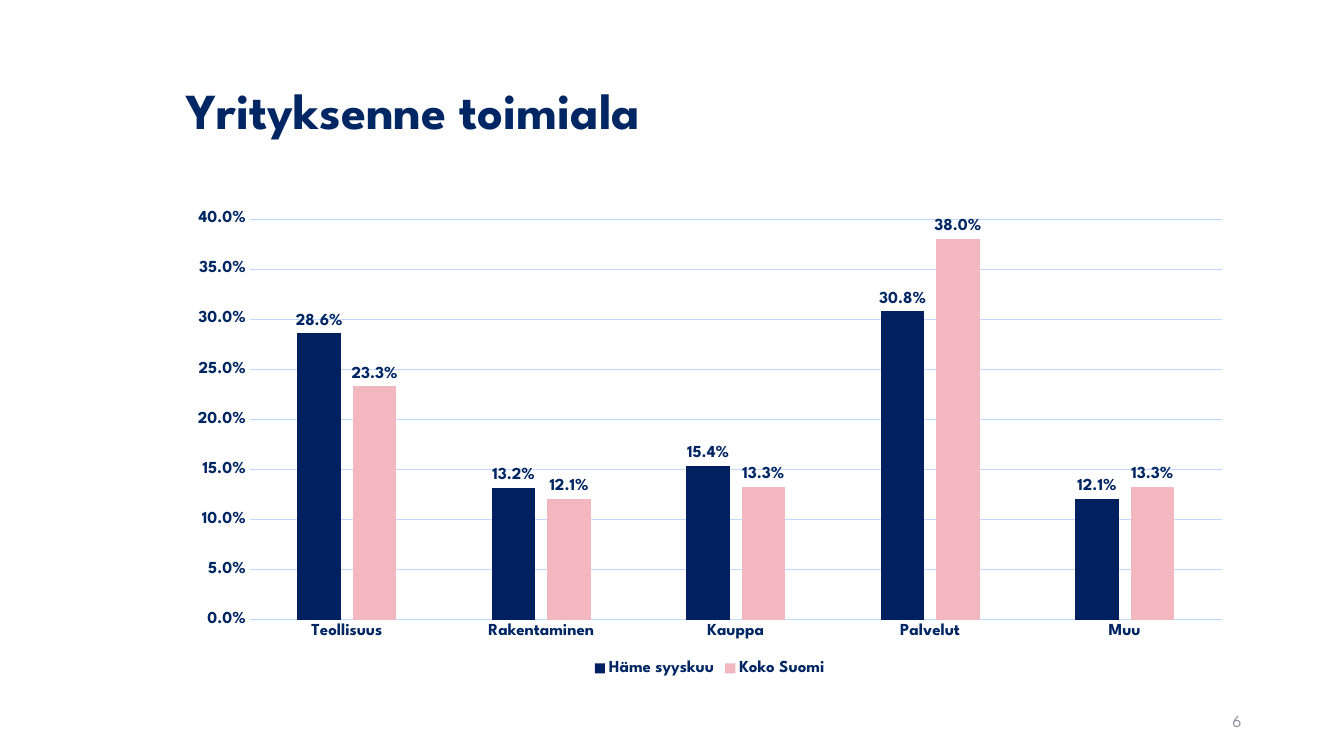
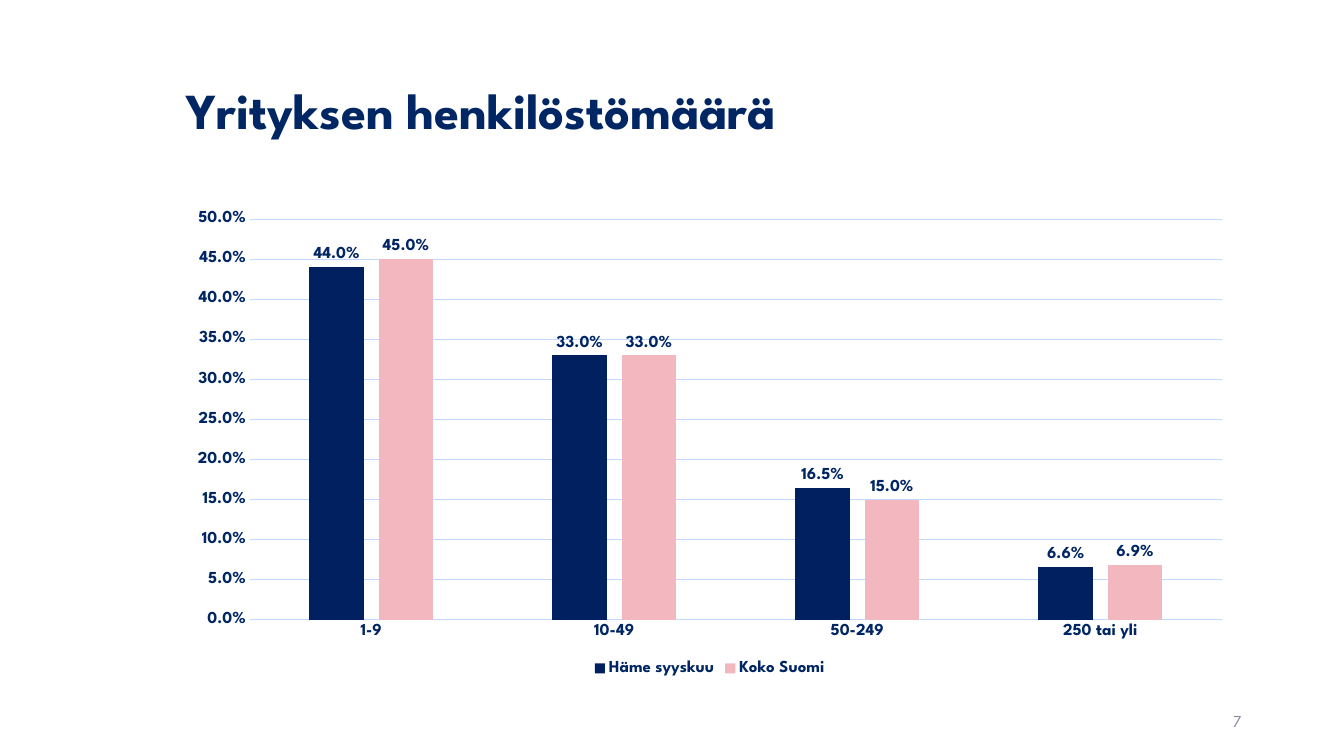
from dataclasses import dataclass
from typing import Any

from pptx import Presentation
from pptx.chart.data import CategoryChartData
from pptx.dml.color import RGBColor
from pptx.enum.chart import (XL_CHART_TYPE, XL_LABEL_POSITION,
                             XL_LEGEND_POSITION, XL_TICK_MARK)
from pptx.enum.text import MSO_ANCHOR, PP_ALIGN
from pptx.util import Inches, Pt

# Shared look
NAVY = RGBColor(0x00, 0x26, 0x63)
DARK = RGBColor(0x00, 0x20, 0x60)
PINK = RGBColor(0xF2, 0xB7, 0xBF)
GRID = RGBColor(0xC1, 0xD9, 0xFF)
GREY = RGBColor(0x8C, 0x8E, 0x9F)
FACE = "League Spartan"
HEAD = {"name": FACE, "size": Pt(36), "bold": True}
LABEL = {"name": FACE, "size": Pt(12), "bold": True}
FOOT = {"name": FACE, "size": Pt(12), "bold": False}
PERCENT = "0.0%"
SERIES = (("Häme syyskuu", DARK), ("Koko Suomi", PINK))

# Slide grid
WIDTH, HEIGHT = Inches(13.33), Inches(7.5)
COLS, ROWS = 160, 150


@dataclass(frozen=True)
class Box:
    col: int
    row: int
    cols: int
    rows: int

    def place(self) -> tuple[int, int, int, int]:
        return (WIDTH * self.col // COLS, HEIGHT * self.row // ROWS,
                WIDTH * self.cols // COLS, HEIGHT * self.rows // ROWS)


TITLE = Box(21, 8, 127, 29)
PLOT = Box(21, 40, 127, 95)
NUMBER = Box(113, 139, 36, 8)


@dataclass(frozen=True)
class Page:
    number: int
    title: str
    groups: tuple[str, ...]
    values: tuple[tuple[float, ...], ...]
    top: float


PAGES = (
    Page(6, "Yrityksenne toimiala",
         ("Teollisuus", "Rakentaminen", "Kauppa", "Palvelut", "Muu"),
         ((0.286, 0.132, 0.154, 0.308, 0.121),
          (0.233, 0.121, 0.133, 0.38, 0.133)), 0.4),
    Page(7, "Yrityksen henkilöstömäärä",
         ("1-9", "10-49", "50-249", "250 tai yli"),
         ((0.44, 0.33, 0.165, 0.066),
          (0.45, 0.33, 0.15, 0.069)), 0.5),
)


def assign(item: Any, values: dict[str, Any]) -> None:
    for name, value in values.items():
        setattr(item, name, value)


def style(font: Any, form: dict[str, Any], color: RGBColor) -> None:
    assign(font, form)
    font.color.rgb = color


def rule(line: Any) -> None:
    line.color.rgb = GRID
    line.width = Pt(0.75)


def write(shape: Any, text: str, form: dict[str, Any], color: RGBColor,
          layout: dict[str, Any]) -> None:
    frame = shape.text_frame
    frame.word_wrap = True
    frame.vertical_anchor = MSO_ANCHOR.MIDDLE
    line = frame.paragraphs[0]
    assign(line, layout)
    run = line.add_run()
    run.text = text
    style(run.font, form, color)


def draw_chart(slide: Any, page: Page) -> None:
    data = CategoryChartData(number_format=PERCENT)
    data.categories = page.groups
    for (name, _), values in zip(SERIES, page.values):
        data.add_series(name, values)
    chart = slide.shapes.add_chart(
        XL_CHART_TYPE.COLUMN_CLUSTERED, *PLOT.place(), data).chart
    chart.has_title = False
    style(chart.font, LABEL, NAVY)

    # Legend
    chart.has_legend = True
    assign(chart.legend, {"position": XL_LEGEND_POSITION.BOTTOM,
                          "include_in_layout": False})
    style(chart.legend.font, LABEL, NAVY)

    # Axes
    for axis in (chart.category_axis, chart.value_axis):
        assign(axis, {"major_tick_mark": XL_TICK_MARK.NONE,
                      "minor_tick_mark": XL_TICK_MARK.NONE})
        style(axis.tick_labels.font, LABEL, NAVY)
    rule(chart.category_axis.format.line)
    scale = chart.value_axis
    assign(scale, {"minimum_scale": 0, "maximum_scale": page.top,
                   "major_unit": 0.05, "has_major_gridlines": True})
    assign(scale.tick_labels, {"number_format": PERCENT,
                               "number_format_is_linked": False})
    scale.format.line.fill.background()
    rule(scale.major_gridlines.format.line)

    # Bars and their labels
    plot = chart.plots[0]
    assign(plot, {"gap_width": 219, "overlap": -27,
                  "vary_by_categories": False})
    for bars, (_, color) in zip(plot.series, SERIES):
        bars.format.fill.solid()
        bars.format.fill.fore_color.rgb = color
        bars.invert_if_negative = False
        labels = bars.data_labels
        assign(labels, {"show_value": True, "number_format": PERCENT,
                        "number_format_is_linked": False,
                        "position": XL_LABEL_POSITION.OUTSIDE_END})
        style(labels.font, LABEL, NAVY)


def draw_page(deck: Any, page: Page) -> None:
    slide = deck.slides.add_slide(deck.slide_layouts[5])
    title = slide.shapes.title
    assign(title, dict(zip(("left", "top", "width", "height"),
                           TITLE.place())))
    write(title, page.title, HEAD, NAVY,
          {"alignment": PP_ALIGN.LEFT, "line_spacing": 0.9})
    draw_chart(slide, page)
    write(slide.shapes.add_textbox(*NUMBER.place()), str(page.number),
          FOOT, GREY, {"alignment": PP_ALIGN.RIGHT})


def main() -> None:
    deck = Presentation()
    assign(deck, {"slide_width": WIDTH, "slide_height": HEIGHT})
    for page in PAGES:
        draw_page(deck, page)
    deck.save("out.pptx")


if __name__ == "__main__":
    main()
